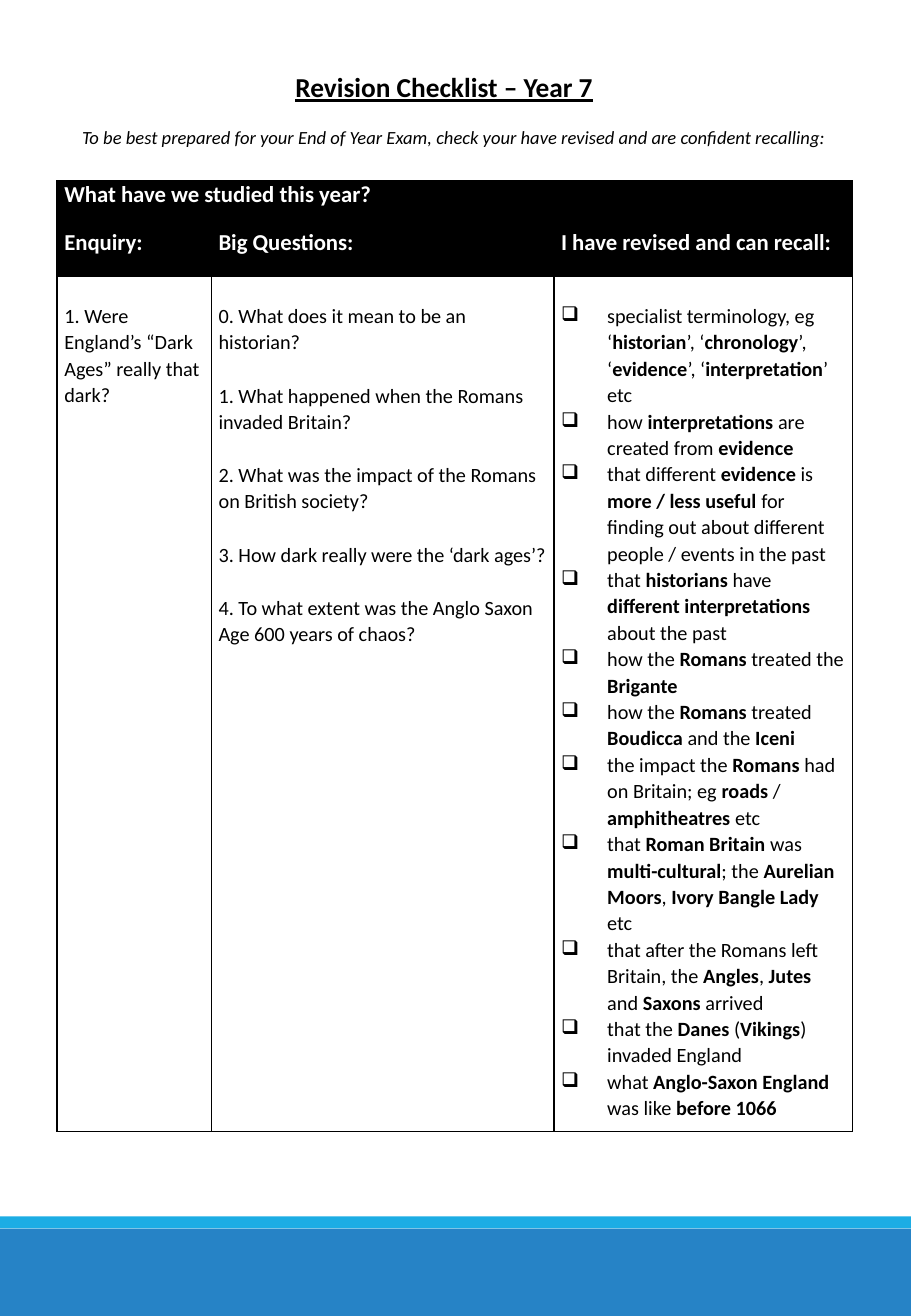
from dataclasses import dataclass

from lxml.etree import SubElement
from pptx import Presentation
from pptx.dml.color import RGBColor
from pptx.enum.shapes import MSO_SHAPE as Shape
from pptx.enum.text import PP_ALIGN as Align
from pptx.oxml.ns import qn
from pptx.util import Inches, Pt

BLACK = RGBColor(0, 0, 0)
WHITE = RGBColor(255, 255, 255)
BLUE = RGBColor(0x26, 0x83, 0xC6)
CYAN = RGBColor(0x1C, 0xAD, 0xE4)

FONT = "Calibri"
COL_WIDTHS = (1.27, 2.82, 2.46)
ROW_HEIGHTS = (0.39, 0.39, 7.04)
BLANK_LINE = 0.22
INDENT = 0.38
HEADINGS = ("Enquiry:", "Big Questions:", "I have revised and can recall:")
ENQUIRY = ("1. Were England’s “Dark Ages” really that dark?",)
QUESTIONS = (
    "0. What does it mean to be an historian?",
    "1. What happened when the Romans invaded Britain?",
    "2. What was the impact of the Romans on British society?",
    "3. How dark really were the ‘dark ages’?",
    "4. To what extent was the Anglo Saxon Age 600 years of chaos?",
)
RECALL = (
    "specialist terminology, eg ‘*historian*’, ‘*chronology*’, ‘*evidence*’, ‘*interpretation*’ etc",
    "how *interpretations* are created from *evidence*",
    "that different *evidence* is *more / less useful *for finding out about different people / events in the past",
    "that *historians* have *different interpretations *about the past",
    "how the *Romans* treated the *Brigante*",
    "how the *Romans* treated *Boudicca* and the *Iceni*",
    "the impact the *Romans* had on Britain; eg *roads* / *amphitheatres* etc",
    "that *Roman Britain *was *multi-cultural*; the *Aurelian Moors*, *Ivory Bangle Lady* etc",
    "that after the Romans left Britain, the *Angles*, *Jutes* and *Saxons* arrived",
    "that the *Danes* (*Vikings*) invaded England",
    "what *Anglo-Saxon England *was like *before 1066*",
)


@dataclass(frozen=True)
class Band:
    top: float
    height: float
    color: RGBColor


@dataclass(frozen=True)
class Caption:
    box: tuple[float, float, float, float]
    text: str
    size: float
    bold: bool = False
    italic: bool = False
    underline: bool = False


@dataclass(frozen=True)
class Column:
    items: tuple[str, ...]
    gap: float = 0
    bulleted: bool = False


BANDS = (Band(10.11, 0.72, BLUE), Band(10.01, 0.1, CYAN))
CAPTIONS = (
    Caption((1.31, 0.53, 4.69, 0.37), "Revision Checklist – Year 7", 16.2, bold=True, underline=True),
    Caption(
        (0.46, 0.99, 6.56, 0.29),
        "To be best prepared for your End of Year Exam, check your have revised and are confident recalling:",
        11,
        italic=True,
    ),
)
COLUMNS = (Column(ENQUIRY), Column(QUESTIONS, gap=BLANK_LINE), Column(RECALL, bulleted=True))


def add_run(p, text: str, size: float, color: RGBColor = BLACK, bold: bool = False):
    """Append one formatted run to a paragraph."""
    r = p.add_run()
    r.text = text
    r.font.name = FONT
    r.font.size = Pt(size)
    r.font.bold = bold
    r.font.color.rgb = color
    return r


def add_band(s, band: Band) -> None:
    """Draw a full-width footer band."""
    sp = s.shapes.add_shape(Shape.RECTANGLE, 0, Inches(band.top), Inches(7.5), Inches(band.height))
    sp.shadow.inherit = False
    sp.fill.solid()
    sp.fill.fore_color.rgb = band.color
    sp.line.fill.background()


def add_caption(s, caption: Caption) -> None:
    """Draw a centred line of text."""
    tf = s.shapes.add_textbox(*map(Inches, caption.box)).text_frame
    tf.word_wrap = True
    p = tf.paragraphs[0]
    p.alignment = Align.CENTER
    r = add_run(p, caption.text, caption.size, bold=caption.bold)
    r.font.italic = caption.italic
    r.font.underline = caption.underline


def style_cell(cell, fill: RGBColor, top: float = 0) -> None:
    """Set a cell's margins, borders and fill."""
    cell.margin_left = cell.margin_right = Inches(0.06)
    cell.margin_top, cell.margin_bottom = Inches(top), 0
    tc_pr = cell._tc.get_or_add_tcPr()
    for side in ("lnL", "lnR", "lnT", "lnB"):
        ln = SubElement(tc_pr, qn(f"a:{side}"), w=str(Pt(1)))
        SubElement(SubElement(ln, qn("a:solidFill")), qn("a:srgbClr"), val=str(BLACK))
    cell.fill.solid()
    cell.fill.fore_color.rgb = fill


def add_bullet(p) -> None:
    """Give a paragraph a checkbox bullet with a hanging indent."""
    p_pr = p._p.get_or_add_pPr()
    p_pr.set("marL", str(Inches(INDENT)))
    p_pr.set("indent", str(-Inches(INDENT)))
    SubElement(p_pr, qn("a:buChar"), char="❑")


def fill_column(cell, column: Column) -> None:
    """Write a column's items, with starred words in bold."""
    tf = cell.text_frame
    for i, item in enumerate(column.items):
        p = tf.add_paragraph() if i else tf.paragraphs[0]
        p.line_spacing = 1.07
        if i and column.gap:
            p.space_before = Inches(column.gap)
        if column.bulleted:
            add_bullet(p)
        for j, text in enumerate(item.split("*")):
            if text:
                add_run(p, text, 12, bold=j % 2 == 1)


def add_checklist(s) -> None:
    """Draw the revision table."""
    frame = s.shapes.add_table(
        len(ROW_HEIGHTS), len(COL_WIDTHS), Inches(0.47), Inches(1.49),
        Inches(sum(COL_WIDTHS)), Inches(sum(ROW_HEIGHTS)),
    )
    table = frame.table
    table.first_row = table.horz_banding = False
    for row, height in zip(table.rows, ROW_HEIGHTS):
        row.height = Inches(height)
    for c, width in enumerate(COL_WIDTHS):
        table.columns[c].width = Inches(width)
        for r in (0, 1):
            style_cell(table.cell(r, c), BLACK)
        style_cell(table.cell(2, c), WHITE, BLANK_LINE)
        add_run(table.cell(1, c).text_frame.paragraphs[0], HEADINGS[c], 13.5, WHITE, True)
        fill_column(table.cell(2, c), COLUMNS[c])
    title = table.cell(0, 0)
    title.merge(table.cell(0, 2))
    add_run(title.text_frame.paragraphs[0], "What have we studied this year?", 13.5, WHITE, True)


def main() -> None:
    """Build the checklist slide."""
    prs = Presentation()
    prs.slide_width, prs.slide_height = Inches(7.5), Inches(10.83)
    s = prs.slides.add_slide(prs.slide_layouts[6])
    for band in BANDS:
        add_band(s, band)
    add_checklist(s)
    for caption in CAPTIONS:
        add_caption(s, caption)
    prs.save("out.pptx")


if __name__ == "__main__":
    main()
